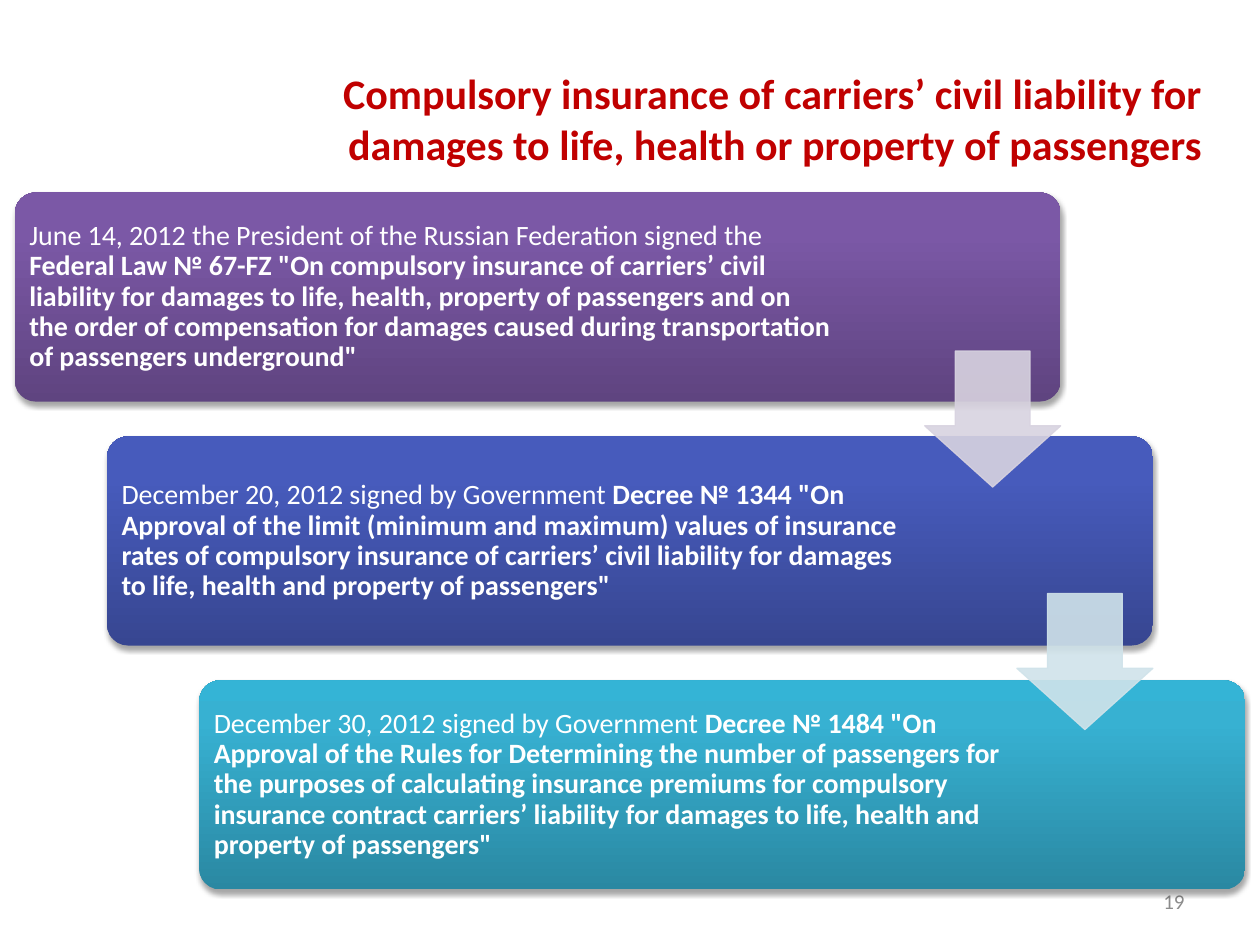
"""Build the slide on compulsory insurance of carriers' civil liability."""
from copy import deepcopy
from lxml import etree
from pptx import Presentation
from pptx.dml.color import RGBColor
from pptx.enum import shapes as sh, text as tx
from pptx.oxml import ns
from pptx.util import Pt

RED = RGBColor(0xC0, 0x00, 0x00)
GREY = RGBColor(0x8C, 0x8C, 0x8C)
WHITE = RGBColor(0xFF, 0xFF, 0xFF)
PURPLE = [RGBColor(0x5F, 0x44, 0x80), RGBColor(0x7B, 0x58, 0xA6), RGBColor(0x7C, 0x57, 0xA8)]
BLUE = [RGBColor(0x37, 0x46, 0x91), RGBColor(0x47, 0x5B, 0xBC), RGBColor(0x45, 0x5A, 0xBF)]
TEAL = [RGBColor(0x2A, 0x88, 0xA2), RGBColor(0x37, 0xB1, 0xD2), RGBColor(0x34, 0xB4, 0xD6)]
LILAC = RGBColor(0xD8, 0xD3, 0xE0)
ICE = RGBColor(0xD0, 0xE3, 0xEA)


def add_run(par, words, size, color, bold=False):
    run = par.add_run()
    run.text = words
    run.font.name = "Calibri"
    run.font.size = Pt(size)
    run.font.bold = bold
    run.font.color.rgb = color


def add_tag(node, name, **attrs):
    return etree.SubElement(node, ns.qn(name), attrs)


deck = Presentation()
deck.slide_width, deck.slide_height = Pt(720), Pt(540)
slide = deck.slides.add_slide(deck.slide_layouts[5])

title = slide.shapes.title
title.left, title.top, title.width, title.height = Pt(121.7), Pt(38.8), Pt(572.4), Pt(79.2)
frame = title.text_frame
frame.word_wrap = True
frame.auto_size = tx.MSO_AUTO_SIZE.NONE
frame.vertical_anchor = tx.MSO_ANCHOR.TOP
frame.margin_top = frame.margin_bottom = 0
par = frame.paragraphs[0]
par.alignment = tx.PP_ALIGN.RIGHT
add_run(par, "Compulsory insurance of carriers’ civil liability for damages to life, "
        "health or property of passengers", 24, RED, True)

box = slide.shapes.add_textbox(Pt(516), Pt(500.5), Pt(168), Pt(28.75))
frame = box.text_frame
frame.word_wrap = True
frame.vertical_anchor = tx.MSO_ANCHOR.MIDDLE
par = frame.paragraphs[0]
par.alignment = tx.PP_ALIGN.RIGHT
add_run(par, "19", 12, GREY)

LEFT, TOP, WIDE, HIGH = 8.5, 110, 597.6, 119.5
STEP, DROP, PAD = 52.7, 139.4, 3.5
steps = [
    (PURPLE, 468.5, "June 14, 2012 the President of the Russian Federation signed the ",
     "Federal Law № 67-FZ \"On compulsory insurance of carriers’ civil liability for damages "
     "to life, health, property of passengers and on the order of compensation for damages "
     "caused during transportation of passengers underground\""),
    (BLUE, 460, "December 20, 2012 signed by Government ",
     "Decree № 1344 \"On Approval of the limit (minimum and maximum) values of insurance "
     "rates of compulsory insurance of carriers’ civil liability for damages to life, "
     "health and property of passengers\""),
    (TEAL, 460, "December 30, 2012 signed by Government ",
     "Decree № 1484 \"On Approval of the Rules for Determining the number of passengers for "
     "the purposes of calculating insurance premiums for compulsory insurance contract "
     "carriers’ liability for damages to life, health and property of passengers\""),
]
for i, (shades, span, lead, law) in enumerate(steps):
    left, top = LEFT + i * STEP, TOP + i * DROP
    card = slide.shapes.add_shape(sh.MSO_SHAPE.ROUNDED_RECTANGLE,
                                  Pt(left), Pt(top), Pt(WIDE), Pt(HIGH))
    card.adjustments[0] = 0.1
    card.line.fill.background()
    card.fill.gradient()
    card.fill.gradient_angle = 90
    stops = card._element.spPr.find(".//" + ns.qn("a:gsLst"))
    stops.append(deepcopy(stops[0]))
    for stop, spot, shade in zip(card.fill.gradient_stops, (0, 0.8, 1), shades):
        stop.position = spot
        stop.color.rgb = shade
    card.shadow.inherit = False
    glow = add_tag(card._element.spPr.find(ns.qn("a:effectLst")), "a:outerShdw",
                   blurRad=str(Pt(3.1)), dist=str(Pt(1.8)), dir="5400000", rotWithShape="0")
    add_tag(add_tag(glow, "a:srgbClr", val="000000"), "a:alpha", val="35000")

    box = slide.shapes.add_textbox(Pt(left + PAD), Pt(top + PAD), Pt(span), Pt(HIGH - 2 * PAD))
    frame = box.text_frame
    frame.word_wrap = True
    frame.vertical_anchor = tx.MSO_ANCHOR.MIDDLE
    frame.margin_left = frame.margin_right = frame.margin_top = frame.margin_bottom = Pt(4.8)
    par = frame.paragraphs[0]
    par.line_spacing = 0.9
    add_run(par, lead, 16, WHITE)
    add_run(par, law, 16, WHITE, True)

SIDE = 77.7
for i, tint in enumerate((LILAC, ICE)):
    arrow = slide.shapes.add_shape(sh.MSO_SHAPE.DOWN_ARROW,
                                   Pt(LEFT + WIDE - SIDE + i * STEP), Pt(200.6 + i * 138.6),
                                   Pt(SIDE), Pt(SIDE))
    arrow.adjustments[0], arrow.adjustments[1] = 0.55, 0.45
    arrow.shadow.inherit = False
    arrow.fill.solid()
    arrow.fill.fore_color.rgb = tint
    arrow.line.color.rgb = tint
    arrow.line.width = Pt(0.75)
    for node in arrow._element.spPr.iter(ns.qn("a:srgbClr")):
        add_tag(node, "a:alpha", val="90000")

deck.save("out.pptx")
